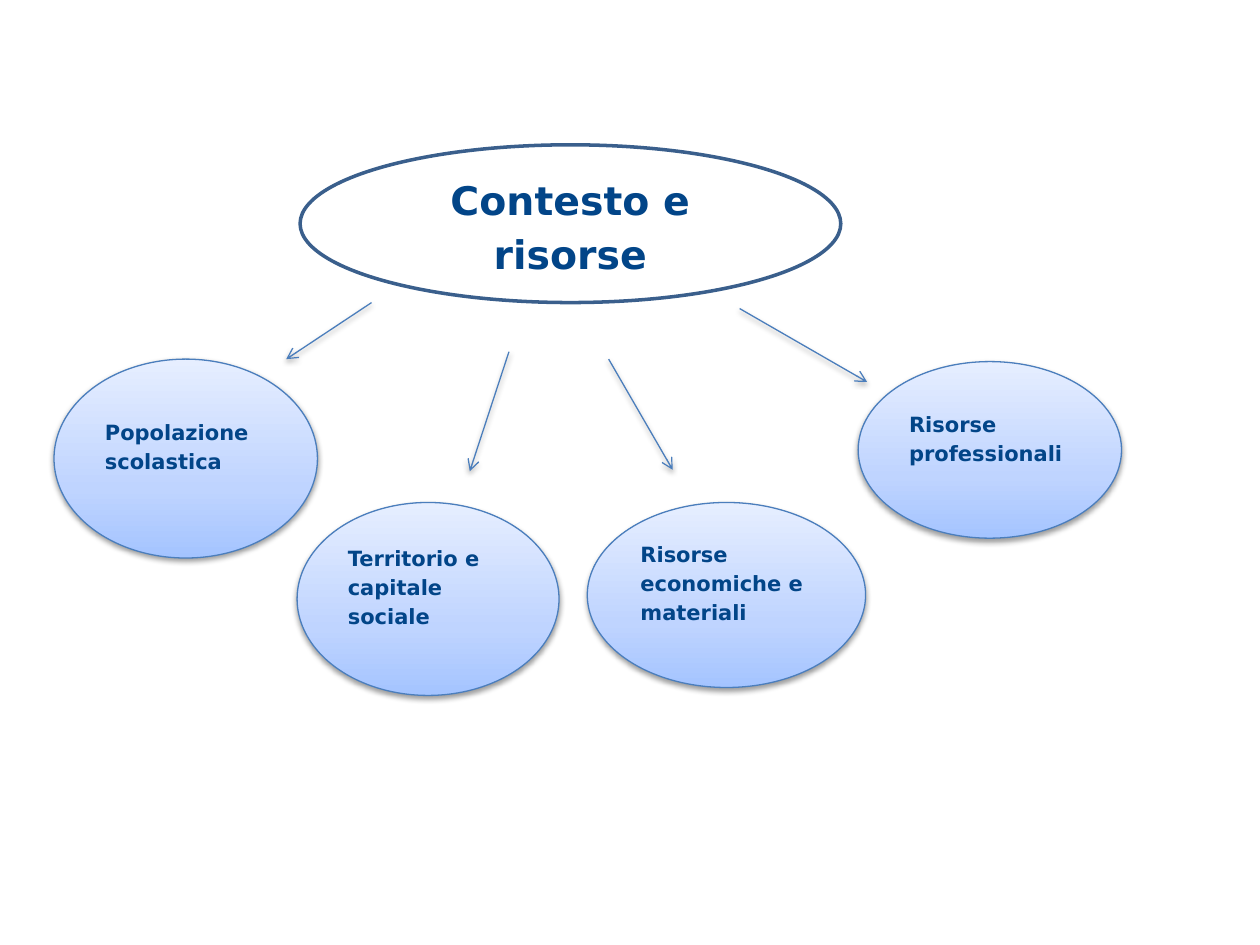
import copy

import pptx
import pptx.dml.color
import pptx.enum.shapes
import pptx.enum.text
import pptx.oxml
import pptx.oxml.ns
import pptx.util

Cm = pptx.util.Cm
Pt = pptx.util.Pt
RGBColor = pptx.dml.color.RGBColor
ALIGN = pptx.enum.text.PP_ALIGN
qn = pptx.oxml.ns.qn

NAVY = RGBColor(0x02, 0x45, 0x88)
OUTLINE = RGBColor(0x3A, 0x5F, 0x8C)
BLUE = RGBColor(0x4B, 0x7E, 0xBC)
GRADIENT = (
    (0, RGBColor(0xA4, 0xC4, 0xFF)),
    (0.35, RGBColor(0xBF, 0xD4, 0xFF)),
    (1, RGBColor(0xE6, 0xEE, 0xFF)),
)
FONT = "DejaVu Sans"
SHADOW = (
    f"<a:effectLst {pptx.oxml.ns.nsdecls('a')}>"
    '<a:outerShdw blurRad="40000" dist="20000" dir="5400000" rotWithShape="0">'
    '<a:srgbClr val="000000"><a:alpha val="38000"/></a:srgbClr>'
    "</a:outerShdw></a:effectLst>"
)

TOPICS = (
    ("Popolazione scolastica", 1.09, 7.24, 5.31, 4.01),
    ("Territorio e capitale sociale", 5.99, 10.13, 5.28, 3.89),
    ("Risorse economiche e materiali", 11.84, 10.13, 5.61, 3.73),
    ("Risorse professionali", 17.3, 7.29, 5.31, 3.56),
)
ARROWS = (
    (7.49, 6.1, 5.77, 7.24),
    (10.26, 7.09, 9.47, 9.5),
    (12.27, 7.24, 13.56, 9.47),
    (14.91, 6.22, 17.48, 7.7),
)


def write(tf, text, size=12, align=ALIGN.LEFT, before=0, bottom=0.13):
    """Write one bold paragraph with the given format."""
    tf.word_wrap = True
    tf.margin_bottom = Cm(bottom)
    p = tf.paragraphs[0]
    p.alignment = align
    p.line_spacing = 1.15
    p.space_before = Pt(before)
    r = p.add_run()
    r.text = text
    r.font.name = FONT
    r.font.size = Pt(size)
    r.font.bold = True
    r.font.color.rgb = NAVY


def add_ellipse(s, box, color, width):
    """Add an outlined ellipse without a shadow."""
    sp = s.shapes.add_shape(
        pptx.enum.shapes.MSO_SHAPE.OVAL, *(Cm(v) for v in box))
    sp.line.color.rgb = color
    sp.line.width = Pt(width)
    sp.shadow.inherit = False
    return sp


def add_shadow(sp):
    """Give a shape or connector a soft shadow below it."""
    spPr = sp._element.spPr
    for old in spPr.findall(qn("a:effectLst")):
        spPr.remove(old)
    spPr.append(pptx.oxml.parse_xml(SHADOW))


def fill_gradient(sp):
    """Fill a shape with the three-stop gradient, darkest at the bottom."""
    sp.fill.gradient()
    sp.fill.gradient_angle = 90
    first = sp._element.spPr.find(".//" + qn("a:gs"))
    first.addnext(copy.deepcopy(first))
    for stop, (position, color) in zip(sp.fill.gradient_stops, GRADIENT):
        stop.position = position
        stop.color.rgb = color


def add_topic(s, text, *box):
    """Add a shaded ellipse holding one topic."""
    sp = add_ellipse(s, box, BLUE, 0.75)
    fill_gradient(sp)
    add_shadow(sp)
    write(sp.text_frame, text, before=6.8, bottom=0.67)


def add_arrow(s, *ends):
    """Add a thin shaded arrow."""
    c = s.shapes.add_connector(
        pptx.enum.shapes.MSO_CONNECTOR.STRAIGHT, *(Cm(v) for v in ends))
    c.line.color.rgb = BLUE
    c.line.width = Pt(0.75)
    ln = c._element.spPr.find(qn("a:ln"))
    ln.append(pptx.oxml.parse_xml(
        f'<a:tailEnd {pptx.oxml.ns.nsdecls("a")} type="arrow"/>'))
    add_shadow(c)


def add_heading(s, text, *box):
    """Add the unfilled ellipse with the main theme."""
    sp = add_ellipse(s, box, OUTLINE, 2)
    sp.fill.background()
    write(sp.text_frame, text, size=22.5, align=ALIGN.CENTER)


def main():
    """Build the slide and save it."""
    prs = pptx.Presentation()
    prs.slide_width, prs.slide_height = Cm(25.4), Cm(19.05)
    s = prs.slides.add_slide(prs.slide_layouts[6])
    for topic in TOPICS:
        add_topic(s, *topic)
    for arrow in ARROWS:
        add_arrow(s, *arrow)
    add_heading(s, "Contesto e risorse", 6.05, 2.92, 10.9, 3.18)
    prs.save("out.pptx")


if __name__ == "__main__":
    main()
